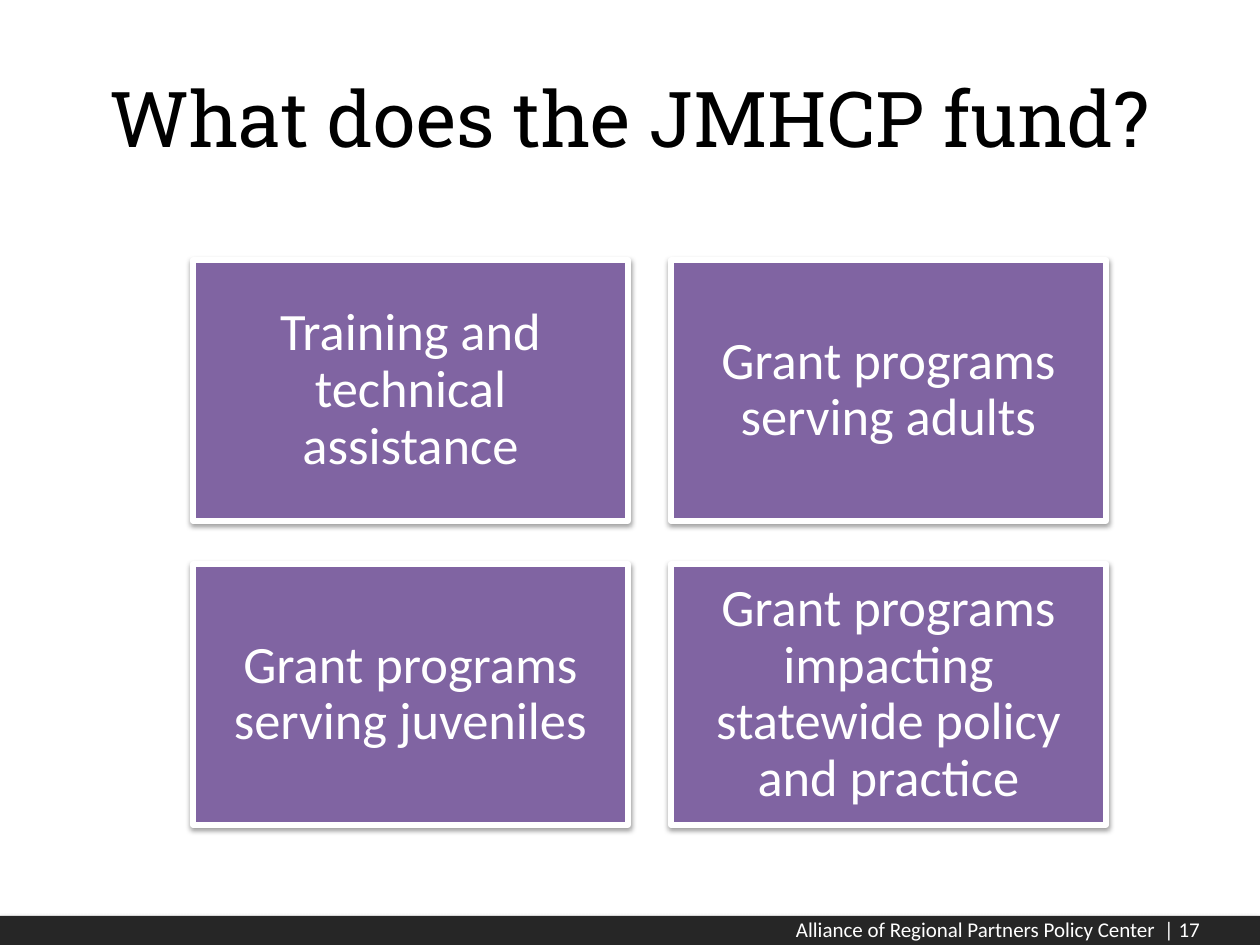
import lxml.etree
import pptx
import pptx.dml.color
import pptx.enum.shapes
import pptx.enum.text
import pptx.oxml.ns
import pptx.util
from dataclasses import dataclass

PX_PER_INCH = 126
ALIGN = pptx.enum.text.PP_ALIGN


@dataclass(frozen=True)
class Theme:
    purple: str = "8064A2"
    bar: str = "262626"
    white: str = "FFFFFF"
    black: str = "000000"
    title_font: str = "Roboto Slab"
    body_font: str = "Calibri"
    title_size: int = 44
    card_size: int = 30
    footer_size: int = 12


THEME = Theme()
CARDS = [
    "Training and technical assistance",
    "Grant programs serving adults",
    "Grant programs serving juveniles",
    "Grant programs impacting statewide policy and practice",
]
COLUMNS = 2
CARD_LEFT, CARD_TOP, CARD_WIDTH, CARD_HEIGHT, CARD_GAP = 193, 260, 435, 261, 43


def px(n):
    return pptx.util.Emu(round(n * 914400 / PX_PER_INCH))


def rgb(color):
    return pptx.dml.color.RGBColor.from_string(color)


def set_text(s, text, font, size, color, align):
    tf = s.text_frame
    tf.text = text
    tf.word_wrap = True
    tf.vertical_anchor = pptx.enum.text.MSO_ANCHOR.MIDDLE
    p = tf.paragraphs[0]
    p.alignment = align
    r = p.runs[0]
    r.font.name = font
    r.font.size = pptx.util.Pt(size)
    r.font.color.rgb = rgb(color)
    return tf


def add_shadow(s, distance, opacity):
    """Give the shape a soft black shadow falling straight down."""
    s.shadow.inherit = False
    effects = s._element.spPr.find(pptx.oxml.ns.qn("a:effectLst"))
    shadow = lxml.etree.SubElement(
        effects, pptx.oxml.ns.qn("a:outerShdw"),
        blurRad=str(pptx.util.Pt(3.1)), dist=str(pptx.util.Pt(distance)),
        dir="5400000", rotWithShape="0")
    color = lxml.etree.SubElement(
        shadow, pptx.oxml.ns.qn("a:srgbClr"), val=THEME.black)
    lxml.etree.SubElement(
        color, pptx.oxml.ns.qn("a:alpha"), val=str(opacity * 1000))


def add_rectangle(slide, left, top, width, height, fill):
    s = slide.shapes.add_shape(
        pptx.enum.shapes.MSO_SHAPE.RECTANGLE,
        px(left), px(top), px(width), px(height))
    s.fill.solid()
    s.fill.fore_color.rgb = rgb(fill)
    s.line.fill.background()
    return s


def add_title(slide, text):
    s = slide.shapes.title
    s.left, s.top, s.width, s.height = px(63), px(38), px(1134), px(157)
    set_text(s, text, THEME.title_font, THEME.title_size, THEME.black, ALIGN.CENTER)


def add_footer(slide, text):
    bar = add_rectangle(slide, 0, 916, 1260, 29, THEME.bar)
    add_shadow(bar, 1.8, 35)
    s = slide.shapes.add_textbox(px(668), px(913), px(545), px(33))
    set_text(s, text, THEME.body_font, THEME.footer_size, THEME.white, ALIGN.RIGHT)


def add_card(slide, left, top, text):
    s = add_rectangle(slide, left, top, CARD_WIDTH, CARD_HEIGHT, THEME.purple)
    s.line.color.rgb = rgb(THEME.white)
    s.line.width = pptx.util.Pt(3)
    add_shadow(s, 1.6, 38)
    tf = set_text(s, text, THEME.body_font, THEME.card_size, THEME.white, ALIGN.CENTER)
    tf.margin_left = tf.margin_right = tf.margin_top = tf.margin_bottom = px(15)
    tf.paragraphs[0].line_spacing = 0.9


def main():
    prs = pptx.Presentation()
    prs.slide_width, prs.slide_height = px(1260), px(945)
    slide = prs.slides.add_slide(prs.slide_layouts[5])
    add_footer(slide, "Alliance of Regional Partners Policy Center  | 17")
    add_title(slide, "What does the JMHCP fund?")
    for i, text in enumerate(CARDS):
        row, column = divmod(i, COLUMNS)
        add_card(slide,
                 CARD_LEFT + column * (CARD_WIDTH + CARD_GAP),
                 CARD_TOP + row * (CARD_HEIGHT + CARD_GAP),
                 text)
    prs.save("out.pptx")


if __name__ == "__main__":
    main()
